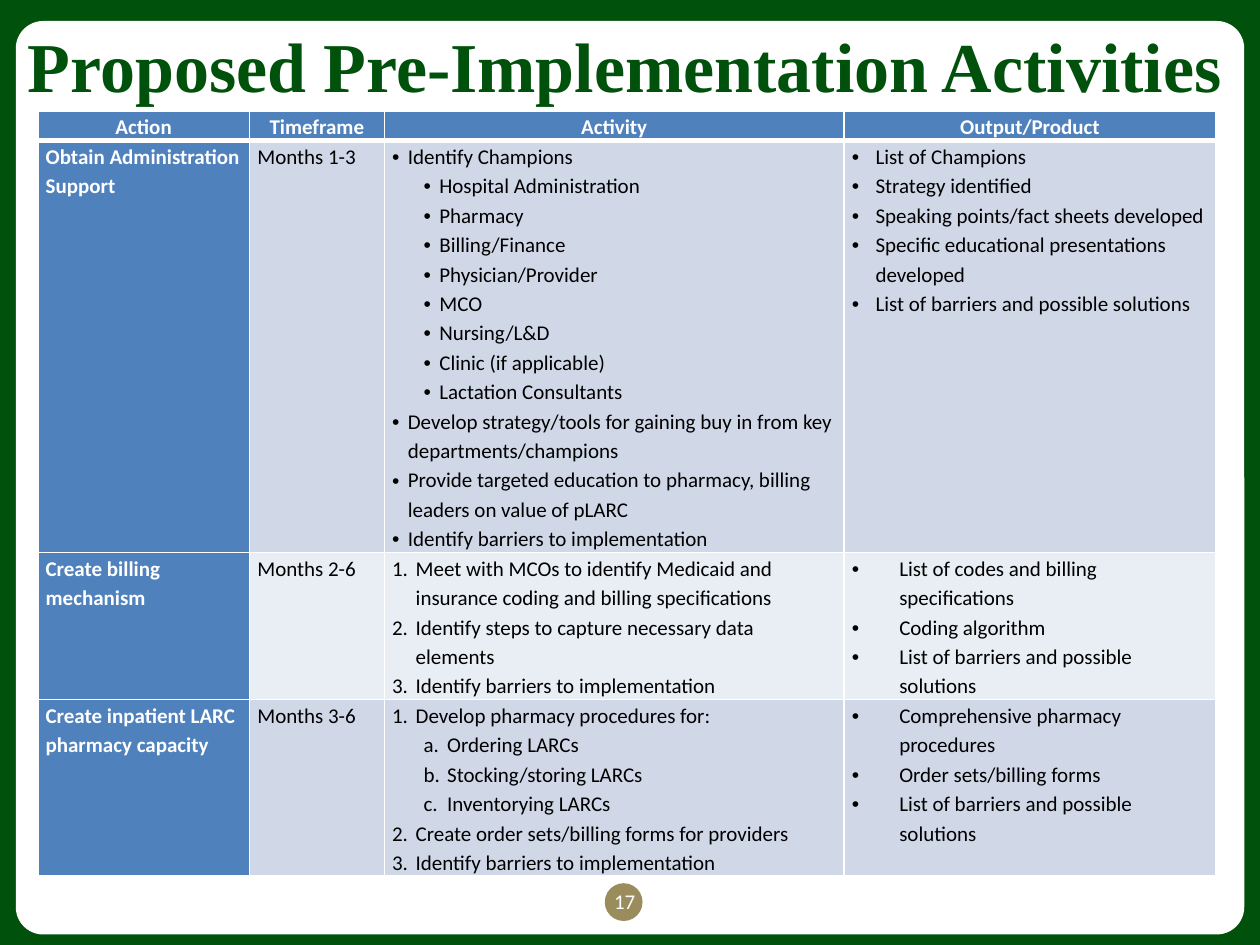
from dataclasses import dataclass

from lxml import etree
from pptx import Presentation
from pptx.dml.color import RGBColor
from pptx.enum import shapes, text
from pptx.oxml import ns
from pptx.util import Pt


@dataclass(frozen=True)
class Theme:
    green: str = "00510B"
    white: str = "FFFFFF"
    black: str = "000000"
    gold: str = "9A8C5C"
    blue: str = "4F81BD"
    bands: tuple = ("D0D8E8", "E9EDF4")
    title_font: str = "Times New Roman"
    body_font: str = "Calibri"
    title_size: float = 40
    body_size: float = 12


THEME = Theme()

# For each list style, one entry per level: left margin, hanging indent, marker.
BULLETS = [(9, 9, "•"), (27, 9, "•")]
WIDE_BULLETS = [(13.5, 13.5, "•")]
WIDEST_BULLETS = [(27, 27, "•")]
NUMBERS = [(13.5, 13.5, "arabicPeriod"), (31.5, 13.5, "alphaLcPeriod")]

COLUMN_WIDTHS = (121, 77, 262.8, 212.4)
ROW_HEIGHTS = (12, 212, 75, 100)
HEADERS = ("Action", "Timeframe", "Activity", "Output/Product")

# Action, timeframe, then style and items of the activity and output lists.
# A nested list holds the second-level items.
ACTIVITIES = [
    ("Obtain Administration Support", "Months 1-3",
     BULLETS, ["Identify Champions",
               ["Hospital Administration", "Pharmacy", "Billing/Finance",
                "Physician/Provider", "MCO", "Nursing/L&D",
                "Clinic (if applicable)", "Lactation Consultants"],
               "Develop strategy/tools for gaining buy in from key departments/champions",
               "Provide targeted education to pharmacy, billing leaders on value of pLARC",
               "Identify barriers to implementation"],
     WIDE_BULLETS, ["List of Champions", "Strategy identified",
                    "Speaking points/fact sheets developed",
                    "Specific educational presentations developed",
                    "List of barriers and possible solutions"]),
    ("Create billing mechanism", "Months 2-6",
     NUMBERS, ["Meet with MCOs to identify Medicaid and insurance coding and billing specifications",
               "Identify steps to capture necessary data elements",
               "Identify barriers to implementation"],
     WIDEST_BULLETS, ["List of codes and billing specifications", "Coding algorithm",
                      "List of barriers and possible solutions"]),
    ("Create inpatient LARC pharmacy capacity", "Months 3-6",
     NUMBERS, ["Develop pharmacy procedures for:",
               ["Ordering LARCs", "Stocking/storing LARCs", "Inventorying LARCs"],
               "Create order sets/billing forms for providers",
               "Identify barriers to implementation"],
     WIDEST_BULLETS, ["Comprehensive pharmacy procedures", "Order sets/billing forms",
                      "List of barriers and possible solutions"]),
]


def rgb(color):
    return RGBColor.from_string(color)


def add_run(paragraph, words, color, bold=False, size=THEME.body_size, font=THEME.body_font):
    run = paragraph.add_run()
    run.text = words
    run.font.name, run.font.size, run.font.bold = font, Pt(size), bold
    run.font.color.rgb = rgb(color)


def add_panel(slide, kind, left, top, width, height, color):
    panel = slide.shapes.add_shape(kind, Pt(left), Pt(top), Pt(width), Pt(height))
    panel.shadow.inherit = False
    panel.fill.solid()
    panel.fill.fore_color.rgb = rgb(color)
    panel.line.fill.background()
    return panel


def add_card(slide):
    """Place the white rounded card behind everything else."""
    card = add_panel(slide, shapes.MSO_SHAPE.ROUNDED_RECTANGLE, 9, 12, 702, 522, THEME.white)
    card.adjustments[0] = 0.03
    slide.shapes._spTree.insert(2, card._element)


def format_title(slide, words):
    title = slide.shapes.title
    title.left, title.top, title.width, title.height = Pt(6), Pt(0), Pt(702), Pt(73.5)
    frame = title.text_frame
    frame.auto_size = text.MSO_AUTO_SIZE.NONE
    frame.vertical_anchor = text.MSO_ANCHOR.MIDDLE
    paragraph = frame.paragraphs[0]
    paragraph.alignment = text.PP_ALIGN.CENTER
    add_run(paragraph, words, THEME.green, True, THEME.title_size, THEME.title_font)


def add_border(cell, side, width):
    line = etree.Element(ns.qn(f"a:ln{side}"), w=str(Pt(width)))
    fill = etree.SubElement(line, ns.qn("a:solidFill"))
    etree.SubElement(fill, ns.qn("a:srgbClr"), val=THEME.white)
    return line


def format_cell(cell, color, bottom_width=1):
    cell.margin_left = cell.margin_right = Pt(4.5)
    cell.margin_top = cell.margin_bottom = Pt(0)
    cell.fill.solid()
    cell.fill.fore_color.rgb = rgb(color)
    widths = {"L": 1, "R": 1, "T": 1, "B": bottom_width}
    for position, (side, width) in enumerate(widths.items()):
        cell._tc.tcPr.insert(position, add_border(cell, side, width))


def set_marker(paragraph, margin, hanging, marker):
    properties = paragraph._p.get_or_add_pPr()
    properties.set("marL", str(Pt(margin)))
    properties.set("indent", str(-Pt(hanging)))
    if marker == "•":
        etree.SubElement(properties, ns.qn("a:buFont"), typeface="Arial")
        etree.SubElement(properties, ns.qn("a:buChar"), char=marker)
    else:
        etree.SubElement(properties, ns.qn("a:buFont"), typeface="+mj-lt")
        etree.SubElement(properties, ns.qn("a:buAutoNum"), type=marker)


def write_line(cell, words, color, bold=False, alignment=None):
    paragraph = cell.text_frame.paragraphs[0]
    paragraph.alignment = alignment
    paragraph.line_spacing = 1.15
    add_run(paragraph, words, color, bold)


def flatten(items, level=0):
    for item in items:
        if isinstance(item, list):
            yield from flatten(item, level + 1)
        else:
            yield level, item


def write_list(cell, style, items):
    frame = cell.text_frame
    for index, (level, words) in enumerate(flatten(items)):
        paragraph = frame.add_paragraph() if index else frame.paragraphs[0]
        set_marker(paragraph, *style[level])
        paragraph.level = level
        paragraph.line_spacing = 1.15
        add_run(paragraph, words, THEME.black)


def add_activity_table(slide):
    table = slide.shapes.add_table(
        len(ROW_HEIGHTS), len(COLUMN_WIDTHS), Pt(21.6), Pt(63.5),
        Pt(sum(COLUMN_WIDTHS)), Pt(sum(ROW_HEIGHTS))).table
    for column, width in zip(table.columns, COLUMN_WIDTHS):
        column.width = Pt(width)
    for row, height in zip(table.rows, ROW_HEIGHTS):
        row.height = Pt(height)
    for cell, header in zip(table.rows[0].cells, HEADERS):
        format_cell(cell, THEME.blue, bottom_width=3)
        write_line(cell, header, THEME.white, True, text.PP_ALIGN.CENTER)
    for index, entry in enumerate(ACTIVITIES):
        action, timeframe, activity_style, activities, output_style, outputs = entry
        cells = list(table.rows[index + 1].cells)
        band = THEME.bands[index % 2]
        for cell, color in zip(cells, (THEME.blue, band, band, band)):
            format_cell(cell, color)
        write_line(cells[0], action, THEME.white, True)
        write_line(cells[1], timeframe, THEME.black)
        write_list(cells[2], activity_style, activities)
        write_list(cells[3], output_style, outputs)


def add_page_number(slide, number):
    add_panel(slide, shapes.MSO_SHAPE.OVAL, 345.6, 504.7, 21.6, 21.6, THEME.gold)
    box = slide.shapes.add_textbox(Pt(342), Pt(504), Pt(30), Pt(25))
    box.text_frame.word_wrap = True
    paragraph = box.text_frame.paragraphs[0]
    paragraph.alignment = text.PP_ALIGN.CENTER
    add_run(paragraph, number, THEME.white)


def main():
    presentation = Presentation()
    presentation.slide_width, presentation.slide_height = Pt(720), Pt(540)
    slide = presentation.slides.add_slide(presentation.slide_layouts[5])
    slide.background.fill.solid()
    slide.background.fill.fore_color.rgb = rgb(THEME.green)
    add_card(slide)
    format_title(slide, "Proposed Pre-Implementation Activities")
    add_activity_table(slide)
    add_page_number(slide, "17")
    presentation.save("out.pptx")


if __name__ == "__main__":
    main()
